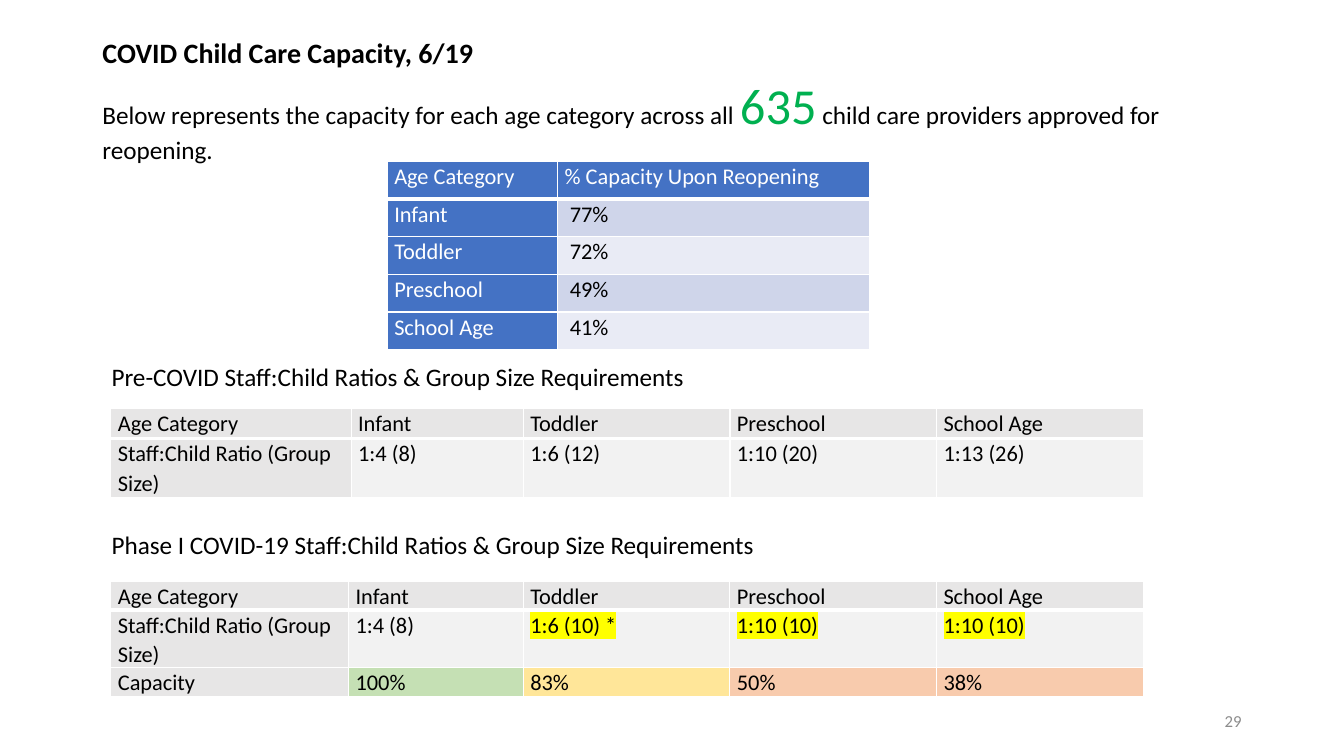
import dataclasses

import lxml.etree
import pptx
import pptx.dml.color
import pptx.enum.text
import pptx.oxml.ns
import pptx.util

ALIGN = pptx.enum.text.PP_ALIGN
ANCHOR = pptx.enum.text.MSO_ANCHOR
NONE = pptx.enum.text.MSO_AUTO_SIZE.NONE


@dataclasses.dataclass(frozen=True)
class Theme:
    """Colours, type sizes and grid of the deck."""
    font: str = "Calibri"
    black: str = "000000"
    white: str = "FFFFFF"
    gray: str = "8C8C8C"
    head: str = "E7E6E6"
    pale: str = "F2F2F2"
    blue: str = "4472C4"
    bands: tuple = ("CFD5EA", "E9EBF5")
    green: str = "00B050"
    mark: str = "FFFF00"
    good: str = "C5E0B4"
    fair: str = "FFE699"
    poor: str = "F8CBAD"
    title: int = 20
    body: int = 18
    cell: int = 16
    note: int = 12
    big: int = 36
    wide: float = 13.33
    high: float = 7.5
    cols: int = 160
    rows: int = 90


class Page:
    """Style and current slide, with places given on a grid of columns and rows."""

    def __init__(self, deck, theme):
        """Add a title-only slide to the deck."""
        self.theme = theme
        deck.slide_width = pptx.util.Inches(theme.wide)
        deck.slide_height = pptx.util.Inches(theme.high)
        self.dx = deck.slide_width / theme.cols
        self.dy = deck.slide_height / theme.rows
        self.slide = deck.slides.add_slide(deck.slide_layouts[5])

    def place(self, col, row, wide, high):
        """Turn grid units into slide lengths."""
        return (round(col * self.dx), round(row * self.dy),
                round(wide * self.dx), round(high * self.dy))

    def ink(self, run, size, color, bold=False):
        """Format one run."""
        run.font.name = self.theme.font
        run.font.size = pptx.util.Pt(size)
        run.font.bold = bold
        run.font.color.rgb = pptx.dml.color.RGBColor.from_string(color)

    def title(self, text, spot):
        """Fill and move the title."""
        shape = self.slide.shapes.title
        shape.left, shape.top, shape.width, shape.height = self.place(*spot)
        frame = shape.text_frame
        frame.text = text
        frame.auto_size = NONE
        frame.vertical_anchor = ANCHOR.MIDDLE
        line = frame.paragraphs[0]
        line.alignment = ALIGN.LEFT
        line.line_spacing = 0.9
        self.ink(line.runs[0], self.theme.title, self.theme.black, True)

    def text(self, parts, spot, align=ALIGN.LEFT, anchor=ANCHOR.TOP):
        """Add a text box of (text, size, colour) parts."""
        frame = self.slide.shapes.add_textbox(*self.place(*spot)).text_frame
        frame.word_wrap = True
        frame.vertical_anchor = anchor
        line = frame.paragraphs[0]
        line.alignment = align
        for words, size, color in parts:
            run = line.add_run()
            run.text = words
            self.ink(run, size, color)

    def label(self, text, row):
        """Add the heading of a ratio table."""
        self.text([(text, self.theme.body, self.theme.black)], (12.1, row, 103, 4.8))

    def edge(self, cell, first):
        """Draw white cell borders, with a thick one below the first row."""
        props = cell._tc.get_or_add_tcPr()
        for side in "LRTB":
            width = 3 if first and side == "B" else 1
            line = lxml.etree.SubElement(props, pptx.oxml.ns.qn("a:ln" + side),
                                         w=str(pptx.util.Pt(width)))
            fill = lxml.etree.SubElement(line, pptx.oxml.ns.qn("a:solidFill"))
            lxml.etree.SubElement(fill, pptx.oxml.ns.qn("a:srgbClr"), val=self.theme.white)

    def glow(self, run):
        """Highlight a run."""
        mark = lxml.etree.Element(pptx.oxml.ns.qn("a:highlight"))
        lxml.etree.SubElement(mark, pptx.oxml.ns.qn("a:srgbClr"), val=self.theme.mark)
        run.font._element.find(pptx.oxml.ns.qn("a:latin")).addprevious(mark)

    def table(self, data, spot, cols, rows, look, marks=()):
        """Add a table; look gives the fill and text colour of a cell."""
        size = self.place(*spot, sum(cols), sum(rows))
        grid = self.slide.shapes.add_table(len(rows), len(cols), *size).table
        grid.first_col = True
        grid.horz_banding = False
        for c, wide in enumerate(cols):
            grid.columns[c].width = round(wide * self.dx)
        for r, high in enumerate(rows):
            grid.rows[r].height = round(high * self.dy)
            for c, words in enumerate(data[r]):
                cell = grid.cell(r, c)
                fill, color = look(r, c)
                cell.margin_left = cell.margin_right = pptx.util.Inches(0.07)
                cell.margin_top = cell.margin_bottom = 0
                self.edge(cell, r == 0)
                cell.fill.solid()
                cell.fill.fore_color.rgb = pptx.dml.color.RGBColor.from_string(fill)
                cell.text_frame.text = words
                line = cell.text_frame.paragraphs[0]
                line.line_spacing = 1.07
                self.ink(line.runs[0], self.theme.cell, color)
                if (r, c) in marks:
                    self.glow(line.runs[0])


def main():
    """Build the slide."""
    theme = Theme()
    deck = pptx.Presentation()
    page = Page(deck, theme)
    ages = ["Infant", "Toddler", "Preschool", "School Age"]
    head = ["Age Category", *ages]
    ratio = "Staff:Child Ratio (Group Size)"
    rates = [theme.good, theme.fair, theme.poor, theme.poor]

    def blue(r, c):
        """Style the table of shares."""
        if r == 0 or c == 0:
            return theme.blue, theme.white
        return theme.bands[(r - 1) % 2], theme.black

    def gray(r, c):
        """Style the ratio tables."""
        if r == 0 or c == 0:
            return theme.head, theme.black
        return (theme.pale if r == 1 else rates[c - 1]), theme.black

    page.title("COVID Child Care Capacity, 6/19", (11, 2.9, 138, 7.2))
    page.text([
        ("Below represents the capacity for each age category across all ",
         theme.body, theme.black),
        ("635", theme.big, theme.green),
        (" child care providers approved for reopening.", theme.body, theme.black),
    ], (11, 8.2, 137, 15.7))

    shares = zip(ages, ["77%", "72%", "49%", "41%"])
    page.table([["Age Category", "% Capacity Upon Reopening"],
                *([age, f" {share}"] for age, share in shares)],
               (46.1, 19.2), [20.3, 37.1], [4.49] * 5, blue)

    page.label("Pre-COVID Staff:Child Ratios & Group Size Requirements", 42.4)
    page.table([head, [ratio, "1:4 (8)", "1:6 (12)", "1:10 (20)", "1:13 (26)"]],
               (13.2, 48.6), [28.6, 20.5] + [24.6] * 3, [3.6, 7.1], gray)

    page.label("Phase I COVID-19 Staff:Child Ratios & Group Size Requirements", 62.4)
    page.table([head, [ratio, "1:4 (8)", "1:6 (10) *", "1:10 (10)", "1:10 (10)"],
                ["Capacity", "100%", "83%", "50%", "38%"]],
               (13.2, 69.2), [28.3, 20.8] + [24.6] * 3, [3.1, 6.5, 3.1], gray,
               [(1, 2), (1, 3), (1, 4)])

    page.text([("29", theme.note, theme.gray)], (113, 83.4, 36, 4.8),
              ALIGN.RIGHT, ANCHOR.MIDDLE)
    deck.save("out.pptx")


if __name__ == "__main__":
    main()
